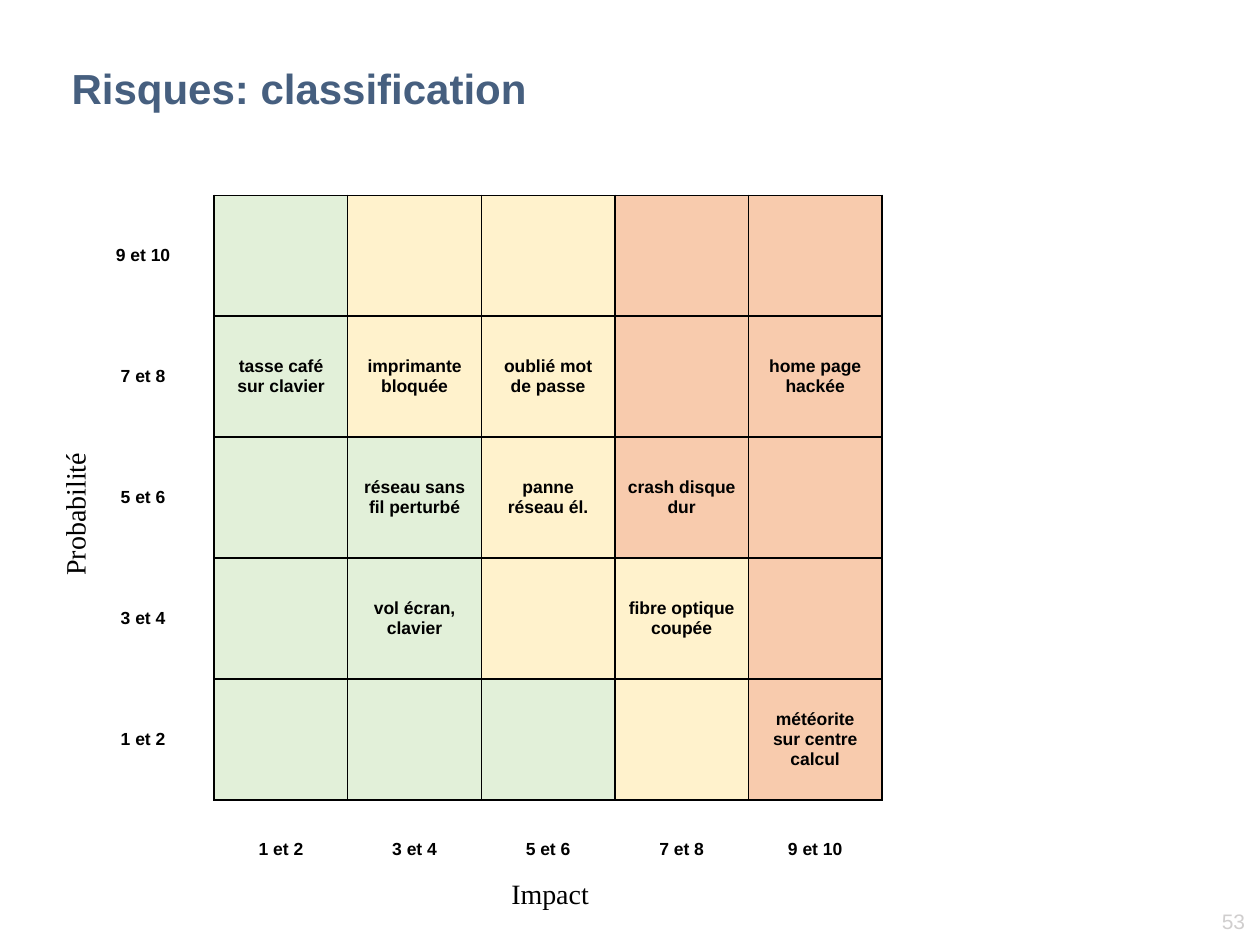
from dataclasses import dataclass

from lxml.etree import SubElement
from pptx import Presentation
from pptx.dml.color import RGBColor
from pptx.enum.text import MSO_ANCHOR, PP_ALIGN
from pptx.oxml.ns import qn
from pptx.slide import Slide
from pptx.table import Table, _Cell
from pptx.util import Inches, Pt

BLACK = RGBColor(0x00, 0x00, 0x00)
TITLE_BLUE = RGBColor(0x46, 0x5F, 0x7F)
NUMBER_GREY = RGBColor(0xD0, 0xCE, 0xCE)
RISK_COLOURS = {
    "L": RGBColor(0xE2, 0xF0, 0xD9),
    "M": RGBColor(0xFF, 0xF2, 0xCC),
    "H": RGBColor(0xF8, 0xCB, 0xAD),
}

SLIDE_WIDTH, SLIDE_HEIGHT = Inches(10), Inches(7.5)
MATRIX_LEFT, MATRIX_TOP = Inches(0.57), Inches(1.55)
LABEL_WIDTH, LABEL_HEIGHT = Inches(1.13), Inches(0.52)
CELL_WIDTH, CELL_HEIGHT = Inches(1.06), Inches(0.96)

LEVELS = ["1 et 2", "3 et 4", "5 et 6", "7 et 8", "9 et 10"]
SEVERITIES = ["LMMHH", "LMMHH", "LLMHH", "LLMMH", "LLLMH"]


@dataclass(frozen=True)
class Risk:
    """An incident placed by its probability row and impact column."""

    row: int
    column: int
    wording: str


@dataclass(frozen=True)
class Caption:
    """A line of text, placed in shares of the slide's size."""

    wording: str
    left: float
    top: float
    width: float
    height: float
    size: int
    font: str = "Arial"
    colour: RGBColor = BLACK
    bold: bool = False
    align: PP_ALIGN = PP_ALIGN.LEFT
    rotation: int = 0
    wrap: bool = True


RISKS = [
    Risk(1, 0, "tasse café sur clavier"),
    Risk(1, 1, "imprimante bloquée"),
    Risk(1, 2, "oublié mot de passe"),
    Risk(1, 4, "home page hackée"),
    Risk(2, 1, "réseau sans fil perturbé"),
    Risk(2, 2, "panne réseau él."),
    Risk(2, 3, "crash disque dur"),
    Risk(3, 1, "vol écran, clavier"),
    Risk(3, 3, "fibre optique coupée"),
    Risk(4, 4, "météorite sur centre calcul"),
]

CAPTIONS = [
    Caption("53", 0.916, 0.955, 0.082, 0.04, 12, colour=NUMBER_GREY, align=PP_ALIGN.RIGHT),
    Caption("Risques: classification", 0.047, 0.055, 0.847, 0.075, 24, colour=TITLE_BLUE, bold=True),
    Caption("Impact", 0.396, 0.921, 0.082, 0.049, 16, "Times New Roman", wrap=False),
    Caption("Probabilité", 0, 0.519, 0.118, 0.049, 16, "Times New Roman", rotation=270, wrap=False),
]


def add_caption(slide: Slide, caption: Caption) -> None:
    """Place one caption on the slide."""
    box = slide.shapes.add_textbox(
        round(caption.left * SLIDE_WIDTH),
        round(caption.top * SLIDE_HEIGHT),
        round(caption.width * SLIDE_WIDTH),
        round(caption.height * SLIDE_HEIGHT),
    )
    box.rotation = caption.rotation
    frame = box.text_frame
    frame.word_wrap = caption.wrap
    frame.vertical_anchor = MSO_ANCHOR.MIDDLE
    frame.text = caption.wording
    paragraph = frame.paragraphs[0]
    paragraph.alignment = caption.align
    font = paragraph.runs[0].font
    font.name, font.size, font.bold = caption.font, Pt(caption.size), caption.bold
    font.color.rgb = caption.colour


def set_borders(cell: _Cell, ruled_sides: str) -> None:
    """Rule the given sides among L, R, T and B and clear the others."""
    properties = cell._tc.get_or_add_tcPr()
    for side in "LRTB":
        line = SubElement(properties, qn(f"a:ln{side}"), w=str(Pt(1)))
        if side in ruled_sides:
            fill = SubElement(line, qn("a:solidFill"))
            SubElement(fill, qn("a:srgbClr"), val=str(BLACK))
        else:
            SubElement(line, qn("a:noFill"))


def write_cell(cell: _Cell, wording: str, anchor: MSO_ANCHOR = MSO_ANCHOR.MIDDLE) -> None:
    """Write centred bold wording in a cell."""
    cell.text_frame.text = wording
    cell.vertical_anchor = anchor
    paragraph = cell.text_frame.paragraphs[0]
    paragraph.alignment = PP_ALIGN.CENTER
    for run in paragraph.runs:
        run.font.name, run.font.size, run.font.bold = "Arial", Pt(10), True
        run.font.color.rgb = BLACK


def add_matrix(slide: Slide) -> Table:
    """Add the empty risk matrix with its column and row sizes."""
    count = len(LEVELS)
    matrix = slide.shapes.add_table(
        count + 1,
        count + 1,
        MATRIX_LEFT,
        MATRIX_TOP,
        LABEL_WIDTH + count * CELL_WIDTH,
        LABEL_HEIGHT + count * CELL_HEIGHT,
    ).table
    matrix.first_row = matrix.horz_banding = False
    for index in range(count + 1):
        matrix.columns[index].width = CELL_WIDTH if index else LABEL_WIDTH
        matrix.rows[index].height = CELL_HEIGHT if index < count else LABEL_HEIGHT
    return matrix


def fill_matrix(matrix: Table) -> None:
    """Colour the matrix and write its levels and risks."""
    count = len(LEVELS)
    for row in range(count + 1):
        for column in range(count + 1):
            cell = matrix.cell(row, column)
            if row < count and column:
                set_borders(cell, "LRTB")
                cell.fill.solid()
                cell.fill.fore_color.rgb = RISK_COLOURS[SEVERITIES[row][column - 1]]
            else:
                set_borders(cell, "R" if row < count else "T" if column else "")
                cell.fill.background()
    for index, level in enumerate(LEVELS):
        write_cell(matrix.cell(count - 1 - index, 0), level)
        write_cell(matrix.cell(count, index + 1), level, MSO_ANCHOR.BOTTOM)
    for risk in RISKS:
        write_cell(matrix.cell(risk.row, risk.column + 1), risk.wording)


def main() -> None:
    """Build the risk classification slide."""
    deck = Presentation()
    deck.slide_width, deck.slide_height = SLIDE_WIDTH, SLIDE_HEIGHT
    slide = deck.slides.add_slide(deck.slide_layouts[6])
    for caption in CAPTIONS:
        add_caption(slide, caption)
    fill_matrix(add_matrix(slide))
    deck.save("out.pptx")


if __name__ == "__main__":
    main()
